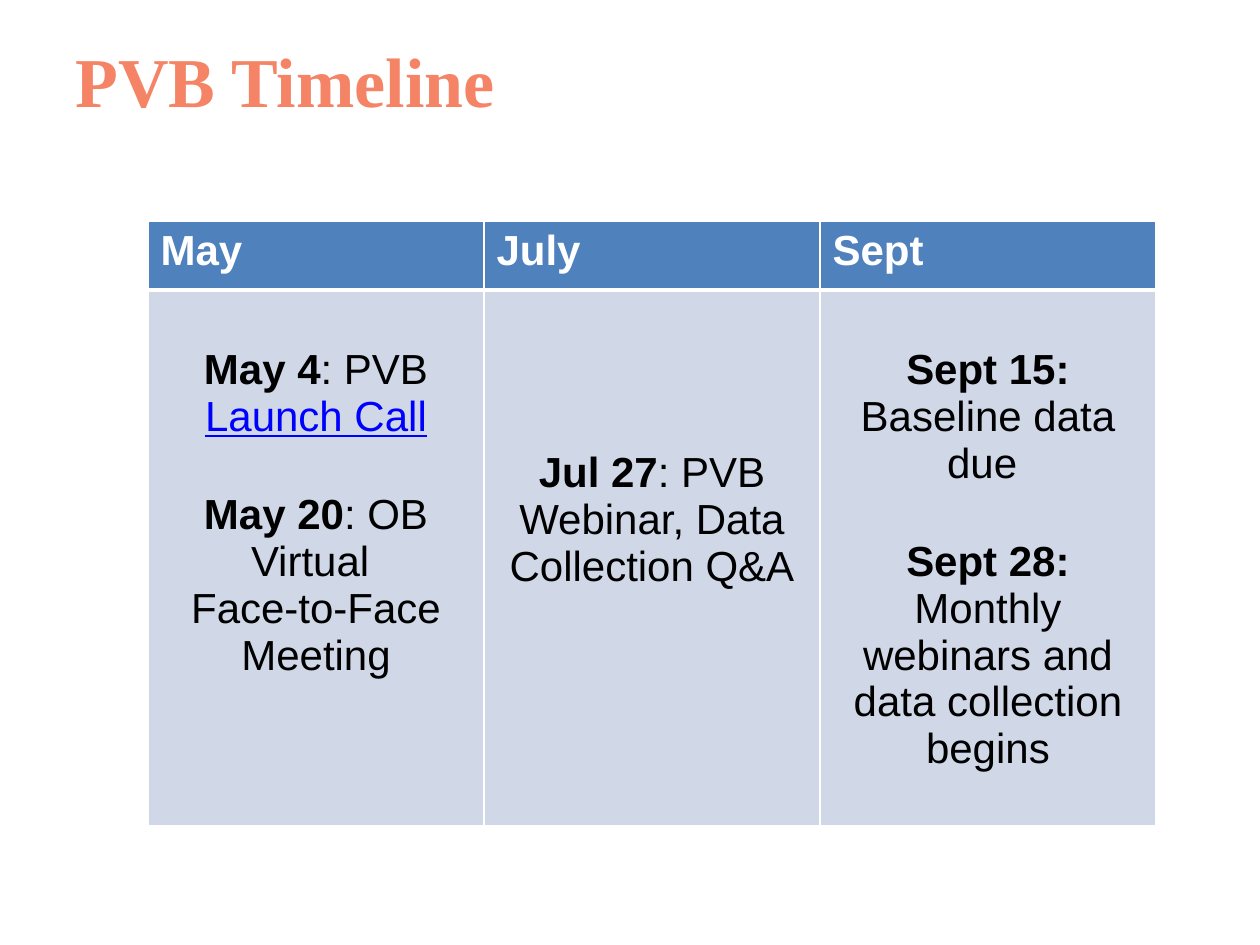
from dataclasses import dataclass

from lxml import etree
from pptx import Presentation
from pptx import util as u
from pptx.dml.color import RGBColor
from pptx.enum import text
from pptx.oxml.ns import qn

PX = 914400 / 126
HEADER_FILL, BODY_FILL = "4F81BD", "D0D8E8"
WHITE, BLACK, BLUE, CORAL = "FFFFFF", "000000", "0000FF", "F58466"
LINE_GAP = 51  # one open line between events


@dataclass
class Span:
    words: str
    bold: bool = False
    link: bool = False


@dataclass
class Line:
    spans: list[Span]
    gap: int = 0


@dataclass
class Month:
    name: str
    top: int  # space above the first event
    lines: list[Line]


MONTHS = [
    Month("May", 57, [
        Line([Span("May 4", bold=True), Span(": PVB "), Span("Launch Call", link=True)]),
        Line([Span("May 20", bold=True), Span(": OB Virtual ")], LINE_GAP),
        Line([Span("Face-to-Face Meeting")]),
    ]),
    Month("July", 160, [
        Line([Span("Jul 27", bold=True), Span(": PVB Webinar, Data Collection Q&A")]),
    ]),
    Month("Sept", 57, [
        Line([Span("Sept 15: ", bold=True), Span("Baseline data due ")]),
        Line([Span("Sept 28: ", bold=True),
              Span("Monthly webinars and data collection begins")], LINE_GAP),
    ]),
]


def px(length: int) -> u.Emu:
    return u.Emu(round(length * PX))


def color(value: str) -> RGBColor:
    return RGBColor.from_string(value)


def set_font(font, size: int, value: str, name: str = "Arial") -> None:
    font.name, font.size = name, u.Pt(size)
    font.color.rgb = color(value)


def style_cell(cell, fill: str, bottom: int = 1, top: int = 1) -> None:
    """Give a cell white borders (widths in points) and a plain fill."""
    properties = cell._tc.get_or_add_tcPr()
    for side, width in (("L", 1), ("R", 1), ("T", top), ("B", bottom)):
        line = etree.SubElement(properties, qn(f"a:ln{side}"), w=str(u.Pt(width)))
        solid = etree.SubElement(line, qn("a:solidFill"))
        etree.SubElement(solid, qn("a:srgbClr"), val=WHITE)
    cell.fill.solid()
    cell.fill.fore_color.rgb = color(fill)


def fill_header(cell, name: str) -> None:
    style_cell(cell, HEADER_FILL, bottom=3)
    cell.text = name
    font = cell.text_frame.paragraphs[0].font
    set_font(font, 24, WHITE)
    font.bold = True


def fill_events(cell, month: Month) -> None:
    style_cell(cell, BODY_FILL, top=3)
    cell.margin_top = px(month.top)
    frame = cell.text_frame
    for index, line in enumerate(month.lines):
        para = frame.add_paragraph() if index else frame.paragraphs[0]
        para.alignment = text.PP_ALIGN.CENTER
        para.space_before = px(line.gap)
        for part in line.spans:
            span = para.add_run()
            span.text = part.words
            set_font(span.font, 24, BLUE if part.link else BLACK)
            span.font.bold, span.font.underline = part.bold, part.link


def main() -> None:
    deck = Presentation()
    deck.slide_width, deck.slide_height = px(1260), px(945)
    page = deck.slides.add_slide(deck.slide_layouts[5])

    # Title
    title = page.shapes.title
    title.left, title.top, title.width, title.height = map(px, (63, 0, 1134, 158))
    title.text_frame.text = "PVB Timeline"
    title.text_frame.vertical_anchor = text.MSO_ANCHOR.MIDDLE
    para = title.text_frame.paragraphs[0]
    para.alignment = text.PP_ALIGN.LEFT
    set_font(para.font, 40, CORAL, "Times New Roman")
    para.font.bold = True

    # Timeline: one column a month
    frame = page.shapes.add_table(2, len(MONTHS), px(148), px(221), px(1008), px(605))
    table = frame.table
    table.horz_banding = False
    table.rows[0].height, table.rows[1].height = px(69), px(536)
    for index, month in enumerate(MONTHS):
        table.columns[index].width = px(336)
        fill_header(table.cell(0, index), month.name)
        fill_events(table.cell(1, index), month)

    deck.save("out.pptx")


if __name__ == "__main__":
    main()
